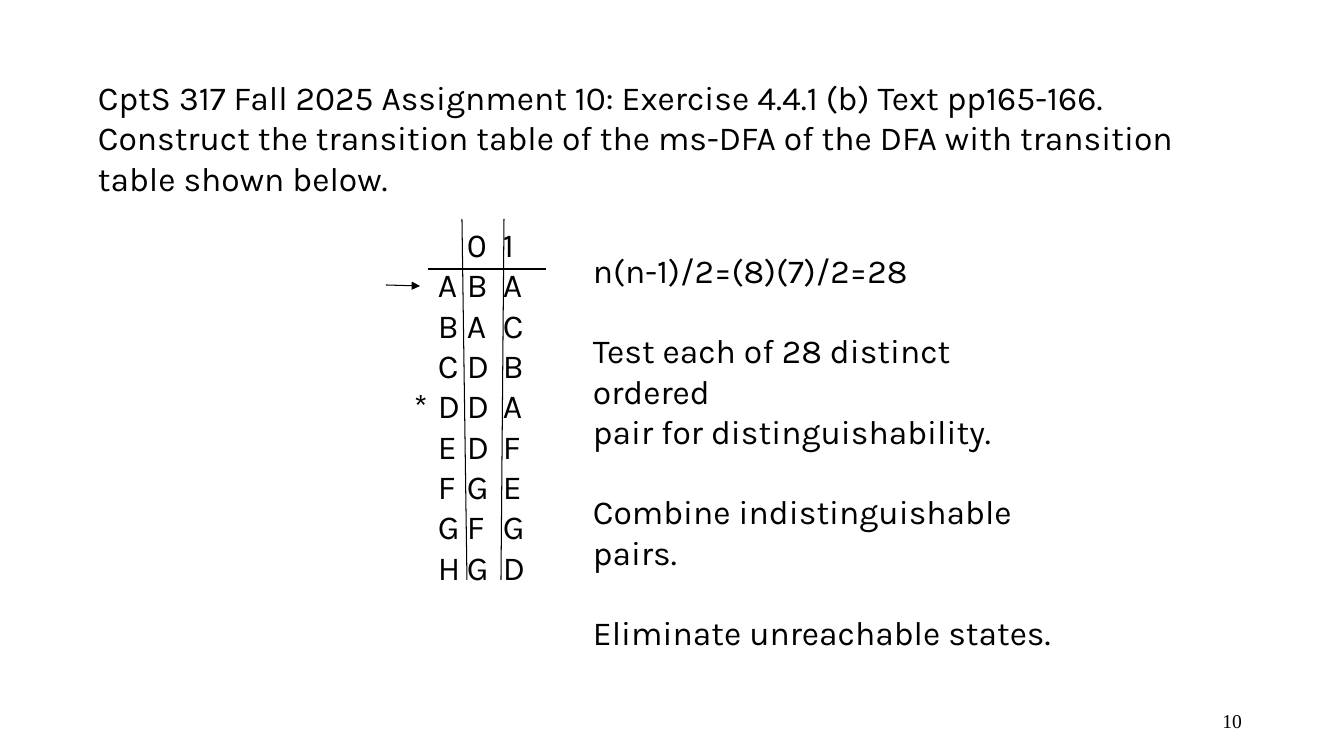
from dataclasses import dataclass

from lxml import etree
from pptx import Presentation, util as u
from pptx.dml.color import RGBColor
from pptx.enum import shapes, text
from pptx.oxml.ns import qn


@dataclass(frozen=True)
class Theme:
    ink: RGBColor = RGBColor(0, 0, 0)
    body_font: str = "Karla"
    number_font: str = "Times New Roman"
    body_size: int = 24
    number_size: int = 14
    rule_width: float = 0.75


def px(length):
    return u.Emu(round(length * 914400 / 100.8))


class SlideBuilder:
    def __init__(self, slide, theme):
        self.slide = slide
        self.theme = theme

    def paragraphs(self, box, lines, wrap=True, gaps=(), tabs=()):
        """Write one paragraph per line; gaps maps a line index to the space above it."""
        frame = self.slide.shapes.add_textbox(*map(px, box)).text_frame
        frame.word_wrap = wrap
        for index, line in enumerate(lines):
            paragraph = frame.paragraphs[0] if index == 0 else frame.add_paragraph()
            paragraph.text = line
            paragraph.font.name = self.theme.body_font
            paragraph.font.size = u.Pt(self.theme.body_size)
            paragraph.font.color.rgb = self.theme.ink
            if index in gaps:
                paragraph.space_before = px(gaps[index])
            if tabs:
                self.tab_stops(paragraph, tabs)
        return frame

    def tab_stops(self, paragraph, positions):
        properties = paragraph._p.get_or_add_pPr()
        stops = etree.Element(qn("a:tabLst"))
        for position in positions:
            etree.SubElement(stops, qn("a:tab"), pos=str(px(position)), algn="l")
        defaults = properties.find(qn("a:defRPr"))
        if defaults is None:
            properties.append(stops)
        else:
            defaults.addprevious(stops)

    def rule(self, start, end, arrow=False):
        connector = self.slide.shapes.add_connector(
            shapes.MSO_CONNECTOR.STRAIGHT, *map(px, start + end))
        connector.line.color.rgb = self.theme.ink
        connector.line.width = u.Pt(self.theme.rule_width)
        if arrow:
            etree.SubElement(connector.line._get_or_add_ln(), qn("a:tailEnd"), type="triangle")
        etree.SubElement(connector._element.spPr, qn("a:effectLst"))

    def page_number(self, box, number):
        frame = self.paragraphs(box, [number])
        frame.vertical_anchor = text.MSO_ANCHOR.MIDDLE
        label = frame.paragraphs[0]
        label.alignment = text.PP_ALIGN.RIGHT
        label.font.name = self.theme.number_font
        label.font.size = u.Pt(self.theme.number_size)


def main():
    deck = Presentation()
    deck.slide_width, deck.slide_height = px(1344), px(756)
    builder = SlideBuilder(deck.slides.add_slide(deck.slide_layouts[6]), Theme())

    builder.page_number((950, 701, 302, 40), "10")
    builder.paragraphs((88, 72, 1164, 132), [
        "CptS 317 Fall 2025 Assignment 10: Exercise 4.4.1 (b) Text pp165-166. "
        "Construct the transition table of the ms-DFA of the DFA with transition "
        "table shown below."])

    # Each state is followed by its successors on inputs 0 and 1.
    transitions = [" 01", "ABA", "BAC", "CDB", "DDA", "EDF", "FGE", "GFG", "HGD"]
    builder.paragraphs((428, 219, 121, 377),
                       ["\t".join(row).lstrip(" ") for row in transitions],
                       wrap=False, tabs=(29, 65))
    builder.rule((462, 219), (467, 580))
    builder.rule((504, 219), (501, 580))
    builder.rule((428, 269), (546, 269))

    builder.rule((386, 285), (420, 286), arrow=True)
    builder.paragraphs((404, 380, 38, 50), ["*"], wrap=False)

    step_gap = 40
    builder.paragraphs((583, 245, 488, 413), [
        "n(n-1)/2=(8)(7)/2=28",
        "Test each of 28 distinct ordered",
        "pair for distinguishability.",
        "Combine indistinguishable pairs.",
        "Eliminate unreachable states.",
    ], gaps={1: step_gap, 3: step_gap, 4: step_gap})

    deck.save("out.pptx")


if __name__ == "__main__":
    main()
